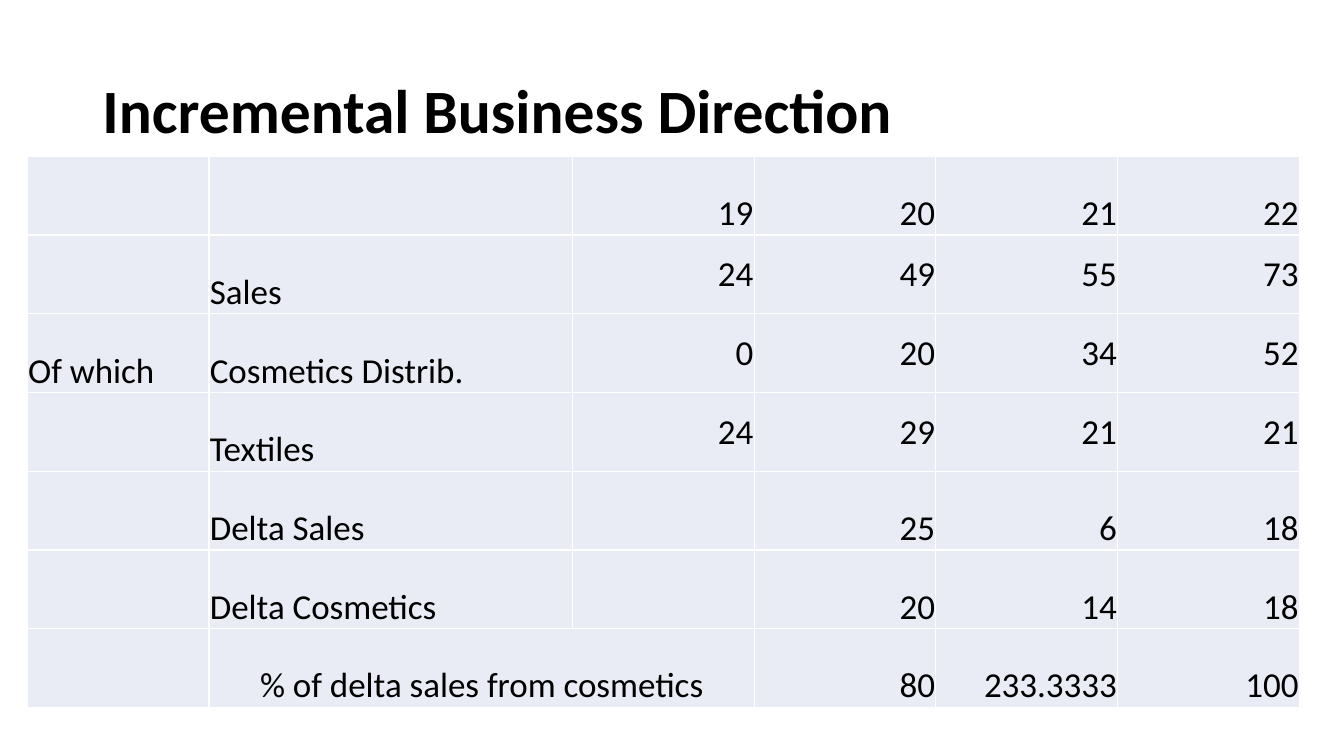
from dataclasses import dataclass

from lxml import etree
from pptx import Presentation
from pptx.dml.color import RGBColor
from pptx.enum import text as txt
from pptx.oxml import ns
from pptx.util import Pt

FONT = "Calibri"
BLACK, WHITE, PALE_BLUE = "000000", "FFFFFF", "E9EBF5"
LEFT, CENTER, RIGHT = txt.PP_ALIGN.LEFT, txt.PP_ALIGN.CENTER, txt.PP_ALIGN.RIGHT
MIDDLE, BOTTOM = txt.MSO_ANCHOR.MIDDLE, txt.MSO_ANCHOR.BOTTOM

UNIT_WIDTH = 129.8
COLUMN_UNITS = (1, 2, 1, 1, 1, 1)
ROW_HEIGHT = 56.26
FIRST_YEAR_COLUMN = 2


@dataclass(frozen=True)
class Row:
    label: str
    values: tuple[str, ...]
    group: str = ""
    value_anchor: txt.MSO_ANCHOR = BOTTOM
    wide_label: bool = False


ROWS = (
    Row("", ("19", "20", "21", "22")),
    Row("Sales", ("24", "49", "55", "73"), value_anchor=MIDDLE),
    Row("Cosmetics Distrib.", ("0", "20", "34", "52"), "Of which", MIDDLE),
    Row("Textiles", ("24", "29", "21", "21"), value_anchor=MIDDLE),
    Row("Delta Sales", ("", "25", "6", "18")),
    Row("Delta Cosmetics", ("", "20", "14", "18")),
    Row("% of delta sales from cosmetics", ("", "80", "233.3333", "100"),
        wide_label=True),
)


def color(value: str) -> RGBColor:
    return RGBColor.from_string(value)


def write(frame, content: str, *, size: float, bold: bool = False,
          align=LEFT, spacing: float = 1.0) -> None:
    paragraph = frame.paragraphs[0]
    paragraph.alignment = align
    paragraph.line_spacing = spacing
    run = paragraph.add_run()
    run.text = content
    run.font.name = FONT
    run.font.size = Pt(size)
    run.font.bold = bold
    run.font.color.rgb = color(BLACK)


def add_borders(cell, line_color: str, width: float) -> None:
    properties = cell._tc.get_or_add_tcPr()
    for side in ("L", "R", "T", "B"):
        line = etree.SubElement(properties, ns.qn(f"a:ln{side}"), w=str(Pt(width)))
        fill = etree.SubElement(line, ns.qn("a:solidFill"))
        etree.SubElement(fill, ns.qn("a:srgbClr"), val=line_color)


def fill_cell(cell, content: str, align, anchor) -> None:
    add_borders(cell, WHITE, 1)
    cell.fill.solid()
    cell.fill.fore_color.rgb = color(PALE_BLUE)
    cell.margin_left = cell.margin_right = cell.margin_top = Pt(0.6)
    cell.margin_bottom = Pt(0)
    cell.vertical_anchor = anchor
    if content:
        write(cell.text_frame, content, size=25, align=align)


def add_title(slide, content: str) -> None:
    title = slide.shapes.title
    title.left, title.top, title.width, title.height = (
        Pt(66), Pt(28.75), Pt(828), Pt(104.4))
    frame = title.text_frame
    frame.auto_size = txt.MSO_AUTO_SIZE.NONE
    frame.vertical_anchor = MIDDLE
    write(frame, content, size=44, bold=True, spacing=0.9)


def add_sales_table(slide) -> None:
    table = slide.shapes.add_table(
        len(ROWS), len(COLUMN_UNITS), Pt(19.5), Pt(111.6),
        Pt(UNIT_WIDTH * sum(COLUMN_UNITS)), Pt(ROW_HEIGHT * len(ROWS))).table
    table.first_row = table.horz_banding = False
    for column, units in zip(table.columns, COLUMN_UNITS):
        column.width = Pt(UNIT_WIDTH * units)
    for index, row in enumerate(ROWS):
        table.rows[index].height = Pt(ROW_HEIGHT)
        fill_cell(table.cell(index, 0), row.group, LEFT, BOTTOM)
        label_align = CENTER if row.wide_label else LEFT
        fill_cell(table.cell(index, 1), row.label, label_align, BOTTOM)
        for column, value in enumerate(row.values, FIRST_YEAR_COLUMN):
            fill_cell(table.cell(index, column), value, RIGHT, row.value_anchor)
        if row.wide_label:
            table.cell(index, 1).merge(table.cell(index, FIRST_YEAR_COLUMN))


def main() -> None:
    presentation = Presentation()
    presentation.slide_width, presentation.slide_height = Pt(960), Pt(540)
    slide = presentation.slides.add_slide(presentation.slide_layouts[5])
    add_title(slide, "Incremental Business Direction")
    add_sales_table(slide)
    presentation.save("out.pptx")


if __name__ == "__main__":
    main()
